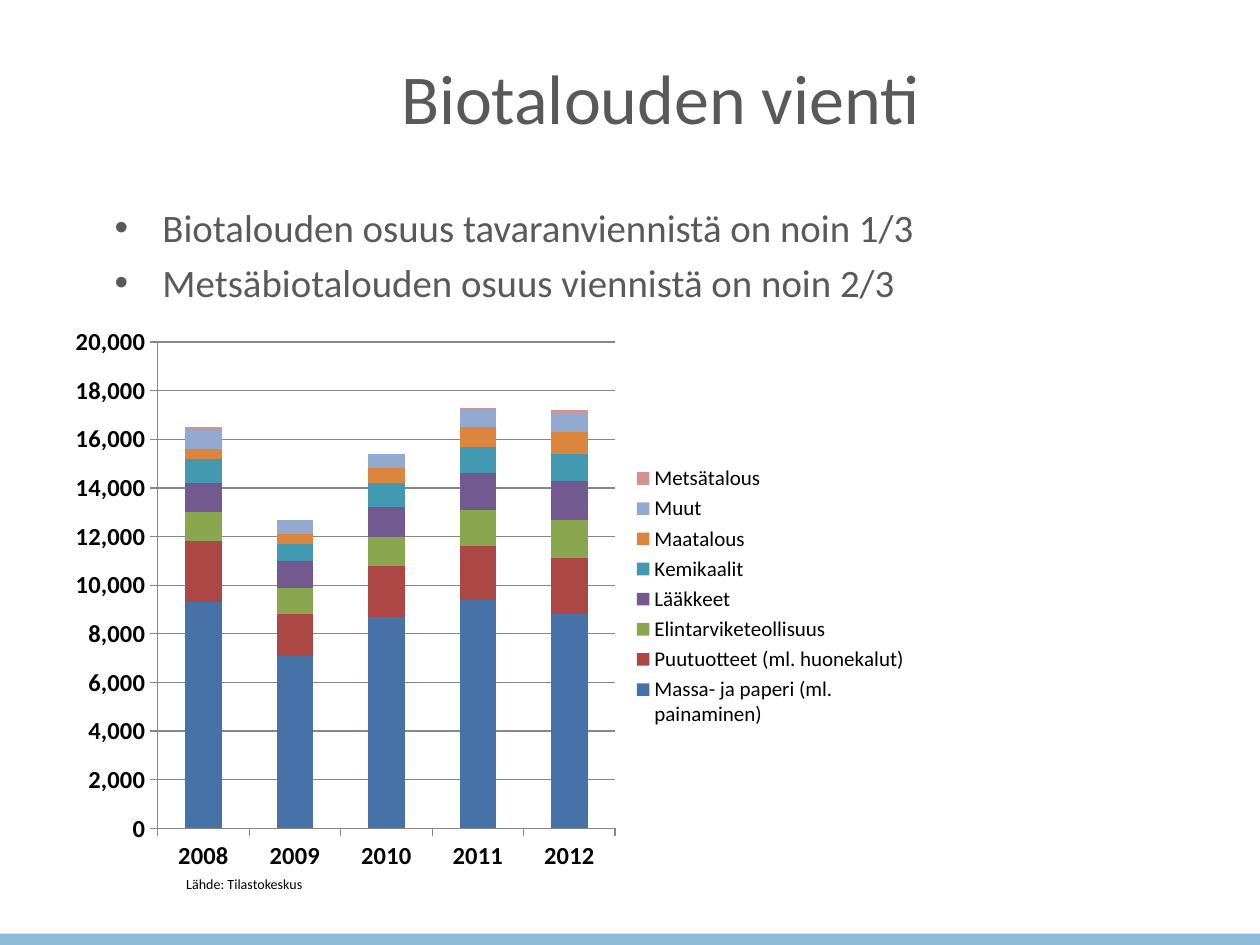
from lxml.etree import SubElement
from pptx import Presentation
from pptx.chart.data import CategoryChartData
from pptx.dml.color import RGBColor
from pptx.enum.chart import XL_CHART_TYPE as ChartType, XL_LEGEND_POSITION as LegendSide
from pptx.enum.chart import XL_TICK_MARK as Tick
from pptx.enum.shapes import MSO_SHAPE as Shape
from pptx.enum.text import MSO_ANCHOR as Anchor, PP_ALIGN as Align
from pptx.oxml import parse_xml
from pptx.oxml.ns import nsdecls, qn
from pptx.util import Inches, Pt

GREY = RGBColor(0x59, 0x59, 0x59)
BLACK = RGBColor(0, 0, 0)
AXIS = RGBColor(0x86, 0x86, 0x86)
SKY = RGBColor(0x8D, 0xBC, 0xDA)
BLUE = RGBColor(0x46, 0x72, 0xA8)
RED = RGBColor(0xAB, 0x47, 0x44)
GREEN = RGBColor(0x8A, 0xA6, 0x4F)
PURPLE = RGBColor(0x72, 0x59, 0x90)
TEAL = RGBColor(0x42, 0x99, 0xB0)
ORANGE = RGBColor(0xDC, 0x85, 0x3E)
LIGHT_BLUE = RGBColor(0x93, 0xA9, 0xCF)
PINK = RGBColor(0xD1, 0x93, 0x92)

YEARS = ["2008", "2009", "2010", "2011", "2012"]
EXPORTS = [
    ("Massa- ja paperi (ml. painaminen)", BLUE, (9300, 7100, 8700, 9400, 8800)),
    ("Puutuotteet (ml. huonekalut)", RED, (2500, 1700, 2100, 2200, 2300)),
    ("Elintarviketeollisuus", GREEN, (1200, 1100, 1200, 1500, 1600)),
    ("Lääkkeet", PURPLE, (1200, 1100, 1200, 1500, 1600)),
    ("Kemikaalit", TEAL, (1000, 700, 1000, 1100, 1100)),
    ("Maatalous", ORANGE, (400, 400, 600, 800, 900)),
    ("Muut", LIGHT_BLUE, (800, 600, 600, 700, 800)),
    ("Metsätalous", PINK, (100, 0, 0, 100, 100)),
]


def apply(target, values):
    for name, value in values.items():
        setattr(target, name, value)


class SlideBuilder:
    font_name = "Calibri"

    def __init__(self, slide):
        self.slide = slide

    def style(self, font, size, color=BLACK, bold=False):
        apply(font, {"name": self.font_name, "size": Pt(size), "bold": bold})
        font.color.rgb = color

    def band(self, box, color):
        band = self.slide.shapes.add_shape(Shape.RECTANGLE, *map(Inches, box))
        band.shadow.inherit = False
        band.fill.solid()
        band.fill.fore_color.rgb = color
        band.line.fill.background()

    def text(self, box, lines, size, color, frame_format, align=Align.LEFT, bullet=False):
        frame = self.slide.shapes.add_textbox(*map(Inches, box)).text_frame
        apply(frame, frame_format)
        for number, line in enumerate(lines):
            paragraph = frame.add_paragraph() if number else frame.paragraphs[0]
            paragraph.alignment = align
            if number:
                paragraph.space_before = Pt(size * 0.2)
            if bullet:
                self.bullet(paragraph)
            run = paragraph.add_run()
            run.text = line
            self.style(run.font, size, color)

    def bullet(self, paragraph):
        properties = paragraph._p.get_or_add_pPr()
        properties.set("marL", str(Inches(0.38)))
        properties.set("indent", str(Inches(-0.38)))
        SubElement(properties, qn("a:buFont"), typeface="Arial")
        SubElement(properties, qn("a:buChar"), char="•")

    def layout(self, x, y, w, h, inner=False):
        target = '<c:layoutTarget val="inner"/>' if inner else ""
        return parse_xml(
            f'<c:layout {nsdecls("c")}><c:manualLayout>{target}'
            '<c:xMode val="edge"/><c:yMode val="edge"/>'
            f'<c:x val="{x}"/><c:y val="{y}"/><c:w val="{w}"/><c:h val="{h}"/>'
            "</c:manualLayout></c:layout>"
        )

    def stacked_columns(self, box, categories, series, plot_area, legend_area):
        data = CategoryChartData(number_format="#,##0")
        data.categories = categories
        for name, _, values in series:
            data.add_series(name, values)
        chart = self.slide.shapes.add_chart(
            ChartType.COLUMN_STACKED, *map(Inches, box), data
        ).chart
        apply(chart, {"has_title": False, "has_legend": True})
        self.style(chart.font, 10)

        plot = chart.plots[0]
        apply(plot, {"gap_width": 150, "overlap": 100, "vary_by_categories": False})
        for drawn, (_, color, _) in zip(plot.series, series):
            drawn.format.fill.solid()
            drawn.format.fill.fore_color.rgb = color

        for axis in (chart.category_axis, chart.value_axis):
            apply(axis, {"major_tick_mark": Tick.OUTSIDE, "minor_tick_mark": Tick.NONE})
            self.style(axis.tick_labels.font, 14, bold=True)
            axis.format.line.color.rgb = AXIS
        apply(chart.value_axis, {
            "minimum_scale": 0, "maximum_scale": 20000,
            "major_unit": 2000, "has_major_gridlines": True,
        })
        apply(chart.value_axis.tick_labels, {
            "number_format": "#,##0", "number_format_is_linked": False,
        })
        chart.value_axis.major_gridlines.format.line.color.rgb = AXIS

        legend = chart.legend
        apply(legend, {"position": LegendSide.RIGHT, "include_in_layout": False})
        self.style(legend.font, 12)
        area = chart._chartSpace.chart.plotArea
        for parent, layout in (
            (area, self.layout(*plot_area, inner=True)),
            (legend._element, self.layout(*legend_area)),
        ):
            for old in parent.findall(qn("c:layout")):
                parent.remove(old)
            parent.insert(0 if parent is area else 1, layout)


def main():
    deck = Presentation()
    apply(deck, {"slide_width": Inches(10), "slide_height": Inches(7.5)})
    page = SlideBuilder(deck.slides.add_slide(deck.slide_layouts[6]))

    flush = {"word_wrap": True, "margin_left": 0, "margin_right": 0,
             "margin_top": 0, "margin_bottom": 0}
    page.band((0, 7.41, 10, 0.09), SKY)
    page.text((0.5, 0.14, 9, 1.25), ["Biotalouden vienti"], 40, GREY,
              {**flush, "margin_left": Inches(0.48), "vertical_anchor": Anchor.MIDDLE},
              align=Align.CENTER)
    page.text((0.91, 1.62, 9, 0.74),
              ["Biotalouden osuus tavaranviennistä on noin 1/3",
               "Metsäbiotalouden osuus viennistä on noin 2/3"],
              22.2, GREY, flush, bullet=True)
    page.stacked_columns((0.43, 2.49, 6.85, 4.49), YEARS, EXPORTS,
                         plot_area=(0.12, 0.05, 0.53, 0.86),
                         legend_area=(0.67, 0.26, 0.32, 0.48))
    page.text((1.38, 6.9, 1.26, 0.24), ["Lähde: Tilastokeskus"], 8, BLACK,
              {"word_wrap": False})
    deck.save("out.pptx")


if __name__ == "__main__":
    main()
